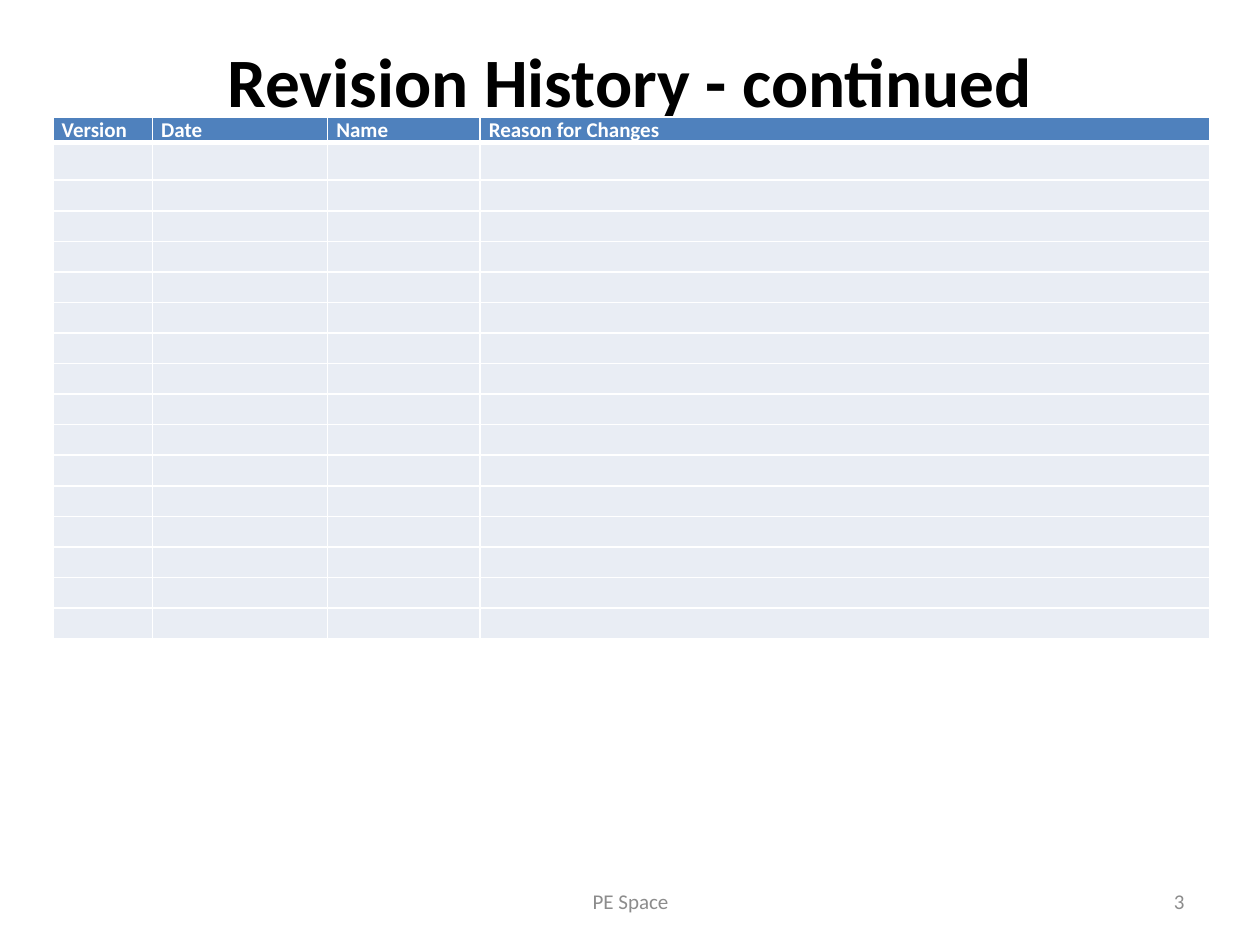
from dataclasses import dataclass

from lxml.etree import SubElement
from pptx import Presentation
from pptx.dml.color import RGBColor
from pptx.enum.text import MSO_ANCHOR as Anchor, PP_ALIGN as Align
from pptx.oxml.ns import qn
from pptx.util import Inches, Pt

FONT = "Calibri"
WHITE, BLACK, GREY = "FFFFFF", "000000", "8C8C8C"
HEADER_BLUE, BODY_BLUE = "4F81BD", "E9EDF4"


@dataclass
class Label:
    text: str
    left: float
    top: float
    width: float
    height: float
    size: float
    color: str
    align: Align
    anchor: Anchor = Anchor.MIDDLE
    bold: bool = False
    inset: float = 0.05


@dataclass
class Column:
    heading: str
    width: float


LABELS = [
    Label("Revision History - continued", 0.5, 0.3, 9, 1.25, 39.6, BLACK,
          Align.CENTER, Anchor.TOP, True, 0),
    Label("PE Space", 3.42, 6.95, 3.17, 0.4, 12, GREY, Align.CENTER),
    Label("3", 7.17, 6.95, 2.33, 0.4, 12, GREY, Align.RIGHT),
]
COLUMNS = [
    Column("Version", 0.79),
    Column("Date", 1.39),
    Column("Name", 1.21),
    Column("Reason for Changes", 5.79),
]
TABLE_LEFT, TABLE_TOP, TABLE_HEIGHT = 0.42, 0.93, 4.14
HEADER_HEIGHT, FIRST_HEIGHT, OTHER_ROWS = 0.2, 0.3, 15
OTHER_HEIGHT = (TABLE_HEIGHT - HEADER_HEIGHT - FIRST_HEIGHT) / OTHER_ROWS
ROW_HEIGHTS = [HEADER_HEIGHT, FIRST_HEIGHT] + [OTHER_HEIGHT] * OTHER_ROWS


def rgb(color: str) -> RGBColor:
    return RGBColor.from_string(color)


def add_run(paragraph, text: str, size: float, color: str, bold: bool) -> None:
    run = paragraph.add_run()
    run.text = text
    run.font.name = FONT
    run.font.size = Pt(size)
    run.font.bold = bold
    run.font.color.rgb = rgb(color)


def add_label(slide, label: Label) -> None:
    box = slide.shapes.add_textbox(Inches(label.left), Inches(label.top),
                                   Inches(label.width), Inches(label.height))
    frame = box.text_frame
    frame.word_wrap = True
    frame.vertical_anchor = label.anchor
    frame.margin_top = frame.margin_bottom = Inches(label.inset)
    paragraph = frame.paragraphs[0]
    paragraph.alignment = label.align
    add_run(paragraph, label.text, label.size, label.color, label.bold)


def set_borders(cell, bottom: float) -> None:
    """White rules on every side, placed ahead of the cell fill."""
    properties = cell._tc.get_or_add_tcPr()
    sides = {"a:lnL": 1, "a:lnR": 1, "a:lnT": 1, "a:lnB": bottom}
    for index, (side, width) in enumerate(sides.items()):
        line = SubElement(properties, qn(side), w=str(Pt(width)))
        fill = SubElement(line, qn("a:solidFill"))
        SubElement(fill, qn("a:srgbClr"), val=WHITE)
        properties.insert(index, line)


def style_cell(cell, fill: str, bottom: float) -> None:
    cell.margin_left = cell.margin_right = Inches(0.07)
    cell.margin_top = cell.margin_bottom = 0
    cell.fill.solid()
    cell.fill.fore_color.rgb = rgb(fill)
    set_borders(cell, bottom)


def add_history_table(slide) -> None:
    width = sum(column.width for column in COLUMNS)
    history = slide.shapes.add_table(
        len(ROW_HEIGHTS), len(COLUMNS), Inches(TABLE_LEFT), Inches(TABLE_TOP),
        Inches(width), Inches(TABLE_HEIGHT)).table
    for row, height in zip(history.rows, ROW_HEIGHTS):
        row.height = Inches(height)

    for index, column in enumerate(COLUMNS):
        history.columns[index].width = Inches(column.width)
        # Heading
        heading = history.cell(0, index)
        style_cell(heading, HEADER_BLUE, 3)
        add_run(heading.text_frame.paragraphs[0], column.heading, 12, WHITE, True)
        # Empty entries, with a text size that fits the row height
        for row_index in range(1, len(ROW_HEIGHTS)):
            entry = history.cell(row_index, index)
            style_cell(entry, BODY_BLUE, 1)
            SubElement(entry.text_frame.paragraphs[0]._p,
                       qn("a:endParaRPr"), sz="1200")


def main() -> None:
    deck = Presentation()
    deck.slide_width, deck.slide_height = Inches(10), Inches(7.5)
    slide = deck.slides.add_slide(deck.slide_layouts[6])

    # Title, then the table over it, then the footer
    title, *footer = LABELS
    add_label(slide, title)
    add_history_table(slide)
    for label in footer:
        add_label(slide, label)

    deck.save("out.pptx")


if __name__ == "__main__":
    main()
